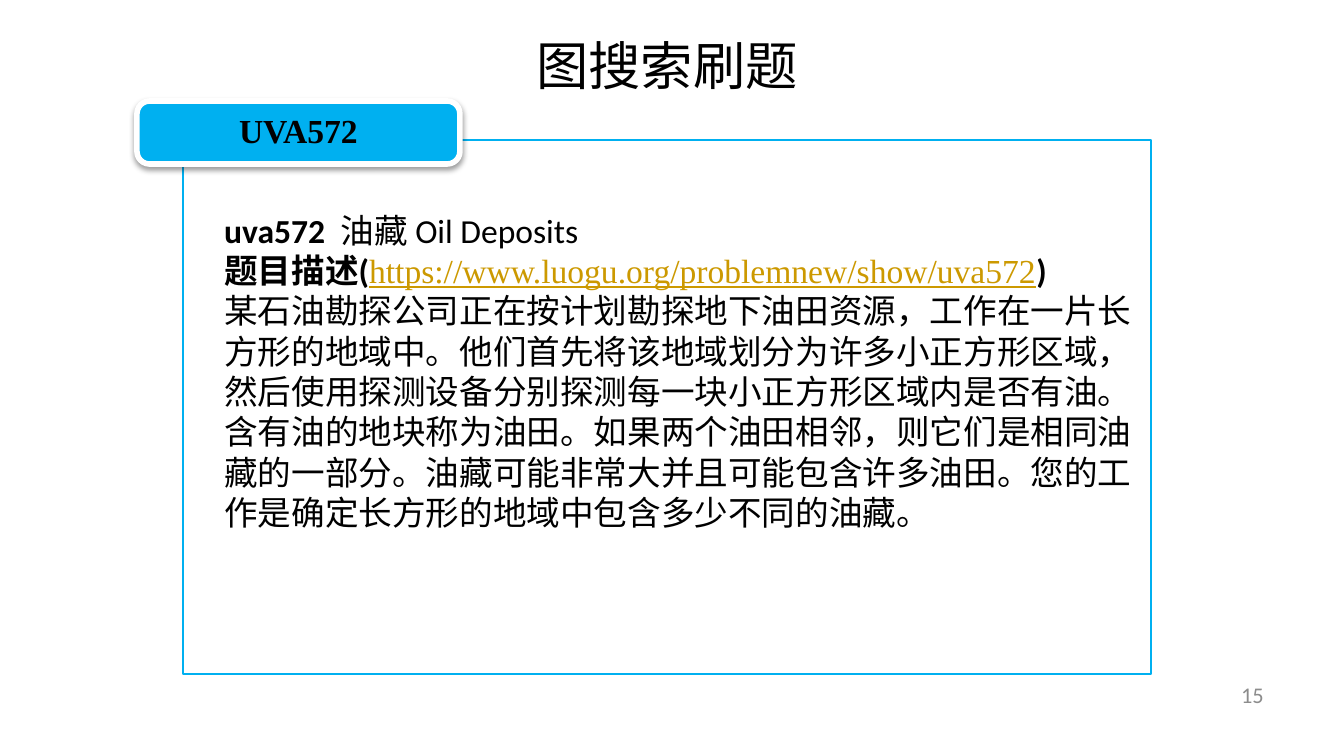
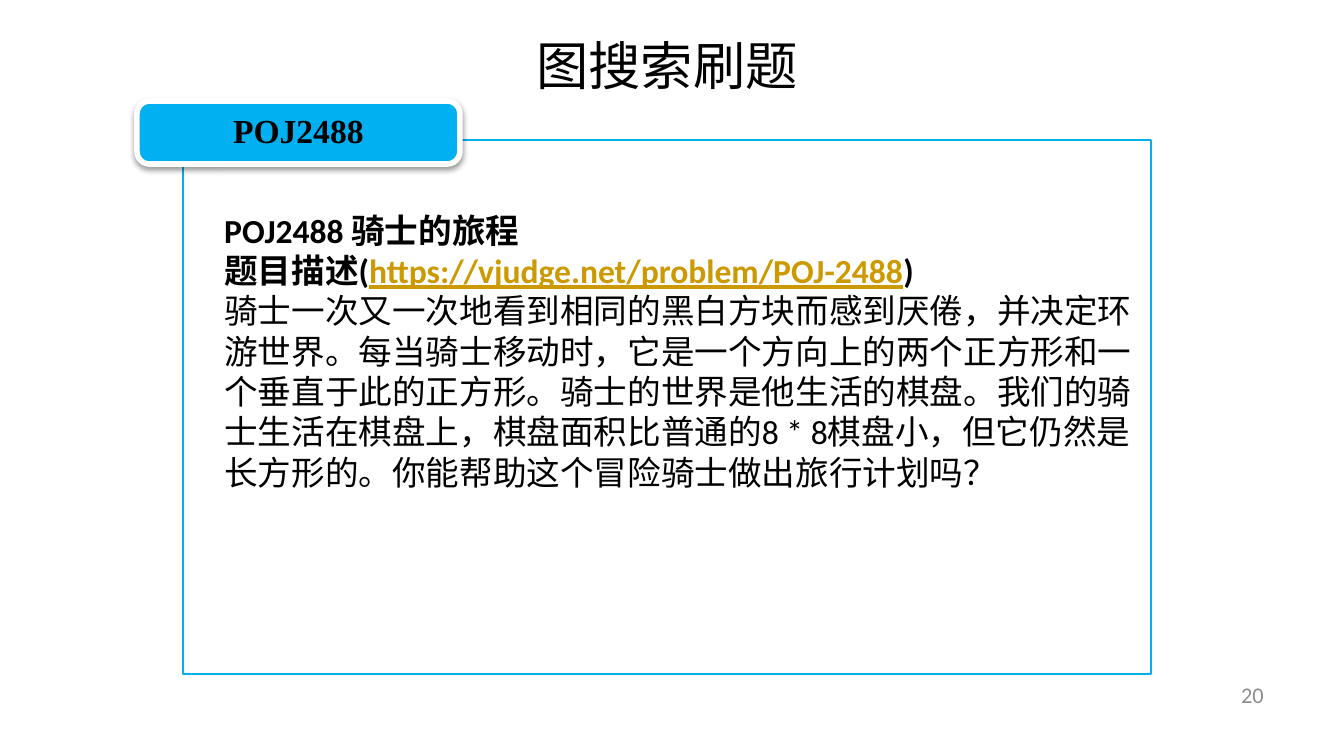
from dataclasses import dataclass

from lxml import etree
from pptx import Presentation
from pptx.dml.color import RGBColor
from pptx.enum import shapes, text
from pptx.oxml.ns import qn
from pptx.util import Emu, Pt

TITLE = "图搜索刷题"

PAGES = [
    {
        "num": "15",
        "tag": "UVA572",
        "high": 339,
        "body": [
            [("uva572  ", "bold"), ("油藏 Oil Deposits", "")],
            [
                ("题目描述(", "bold"),
                ("https://www.luogu.org/problemnew/show/uva572", "link serif"),
                (")", "bold"),
            ],
            [("某石油勘探公司正在按计划勘探地下油田资源，工作在一片长方形的地域中。"
              "他们首先将该地域划分为许多小正方形区域，"
              "然后使用探测设备分别探测每一块小正方形区域内是否有油。", "")],
            [("含有油的地块称为油田。如果两个油田相邻，则它们是相同油藏的一部分。"
              "油藏可能非常大并且可能包含许多油田。"
              "您的工作是确定长方形的地域中包含多少不同的油藏。", "")],
        ],
    },
    {
        "num": "20",
        "tag": "POJ2488",
        "high": 298,
        "body": [
            [("POJ2488 骑士的旅程", "bold")],
            [
                ("题目描述(", "bold"),
                ("https://vjudge.net/problem/POJ-2488", "link bold"),
                (")", "bold"),
            ],
            [("骑士一次又一次地看到相同的黑白方块而感到厌倦，并决定环游世界。"
              "每当骑士移动时，它是一个方向上的两个正方形和一个垂直于此的正方形。"
              "骑士的世界是他生活的棋盘。我们的骑士生活在棋盘上，"
              "棋盘面积比普通的8 * 8棋盘小，但它仍然是长方形的。"
              "你能帮助这个冒险骑士做出旅行计划吗？", "")],
        ],
    },
]


@dataclass(frozen=True)
class Theme:
    ink: str = "000000"
    paper: str = "FFFFFF"
    blue: str = "00B0F0"
    link: str = "CC9900"
    grey: str = "8C8C8C"
    sans: str = "Calibri"
    serif: str = "Times New Roman"
    han: str = "Noto Sans CJK SC"
    head: int = 28
    main: int = 18
    foot: int = 12


LOOK = Theme()
WIDE, HIGH = 1344, 756
SCALE = 914400 / 134.4


def px(n):
    return Emu(round(n * SCALE))


def rgb(code):
    return RGBColor.from_string(code)


def style(para, face, size, tint, bold=False):
    font = para.font
    font.name, font.size, font.bold = face, Pt(size), bold
    font.color.rgb = rgb(tint)
    latin = font._element.find(qn("a:latin"))
    east = etree.Element(qn("a:ea"), typeface=LOOK.han)
    latin.addnext(east)


def label(slide, area, align, grow=True):
    frame = slide.shapes.add_textbox(*map(px, area)).text_frame
    frame.word_wrap = True
    if grow:
        frame.auto_size = text.MSO_AUTO_SIZE.SHAPE_TO_FIT_TEXT
    frame.paragraphs[0].alignment = align
    return frame


def block(slide, kind, area, fill, line, width):
    shape = slide.shapes.add_shape(kind, *map(px, area))
    shape.shadow.inherit = False
    shape.fill.solid()
    shape.fill.fore_color.rgb = rgb(fill)
    shape.line.color.rgb = rgb(line)
    shape.line.width = Pt(width)
    return shape


def shade(shape):
    effects = shape._element.spPr.find(qn("a:effectLst"))
    outer = etree.SubElement(
        effects, qn("a:outerShdw"), blurRad=str(Pt(3.1)), dist=str(Pt(1.6)),
        dir="5400000", rotWithShape="0")
    tint = etree.SubElement(outer, qn("a:srgbClr"), val=LOOK.ink)
    etree.SubElement(tint, qn("a:alpha"), val="38000")


def panel(slide, name):
    kinds = shapes.MSO_SHAPE
    frame = block(slide, kinds.RECTANGLE, (183, 140, 968, 534),
                  LOOK.paper, LOOK.blue, 0.75)
    tint = frame._element.spPr.find(qn("a:solidFill"))[0]
    etree.SubElement(tint, qn("a:alpha"), val="90000")

    tag = block(slide, kinds.ROUNDED_RECTANGLE, (137, 101, 323, 63),
                LOOK.blue, LOOK.paper, 3)
    tag.adjustments[0] = 0.2
    shade(tag)
    inner = tag.text_frame
    inner.word_wrap = True
    inner.vertical_anchor = text.MSO_ANCHOR.MIDDLE
    inner.margin_left = inner.margin_right = px(32)
    inner.margin_top = inner.margin_bottom = px(8)
    para = inner.paragraphs[0]
    para.text = name
    para.alignment = text.PP_ALIGN.CENTER
    para.line_spacing = 0.9
    para.space_after = Pt(6)
    style(para, LOOK.serif, LOOK.main, LOOK.ink, True)


def story(slide, lines, high):
    frame = label(slide, (211, 203, 934, high), text.PP_ALIGN.LEFT)
    for i, line in enumerate(lines):
        para = frame.add_paragraph() if i else frame.paragraphs[0]
        style(para, LOOK.sans, LOOK.main, LOOK.ink)
        for words, marks in line:
            run = para.add_run()
            run.text = words
            if "bold" in marks:
                run.font.bold = True
            if "serif" in marks:
                run.font.name = LOOK.serif
            if "link" in marks:
                run.font.color.rgb = rgb(LOOK.link)
                run.font.underline = True


def base(deck, num):
    slide = deck.slides.add_slide(deck.slide_layouts[6])
    foot = label(slide, (964, 675, 313, 40), text.PP_ALIGN.RIGHT, False)
    foot.vertical_anchor = text.MSO_ANCHOR.MIDDLE
    para = foot.paragraphs[0]
    para.text = num
    style(para, LOOK.sans, LOOK.foot, LOOK.grey)

    para = label(slide, (445, 5, 444, 90), text.PP_ALIGN.CENTER).paragraphs[0]
    para.text = TITLE
    para.line_spacing = 1.35
    style(para, LOOK.han, LOOK.head, LOOK.ink)
    return slide


def main():
    deck = Presentation()
    deck.slide_width, deck.slide_height = px(WIDE), px(HIGH)
    for page in PAGES:
        slide = base(deck, page["num"])
        panel(slide, page["tag"])
        story(slide, page["body"], page["high"])
    deck.save("out.pptx")


if __name__ == "__main__":
    main()
